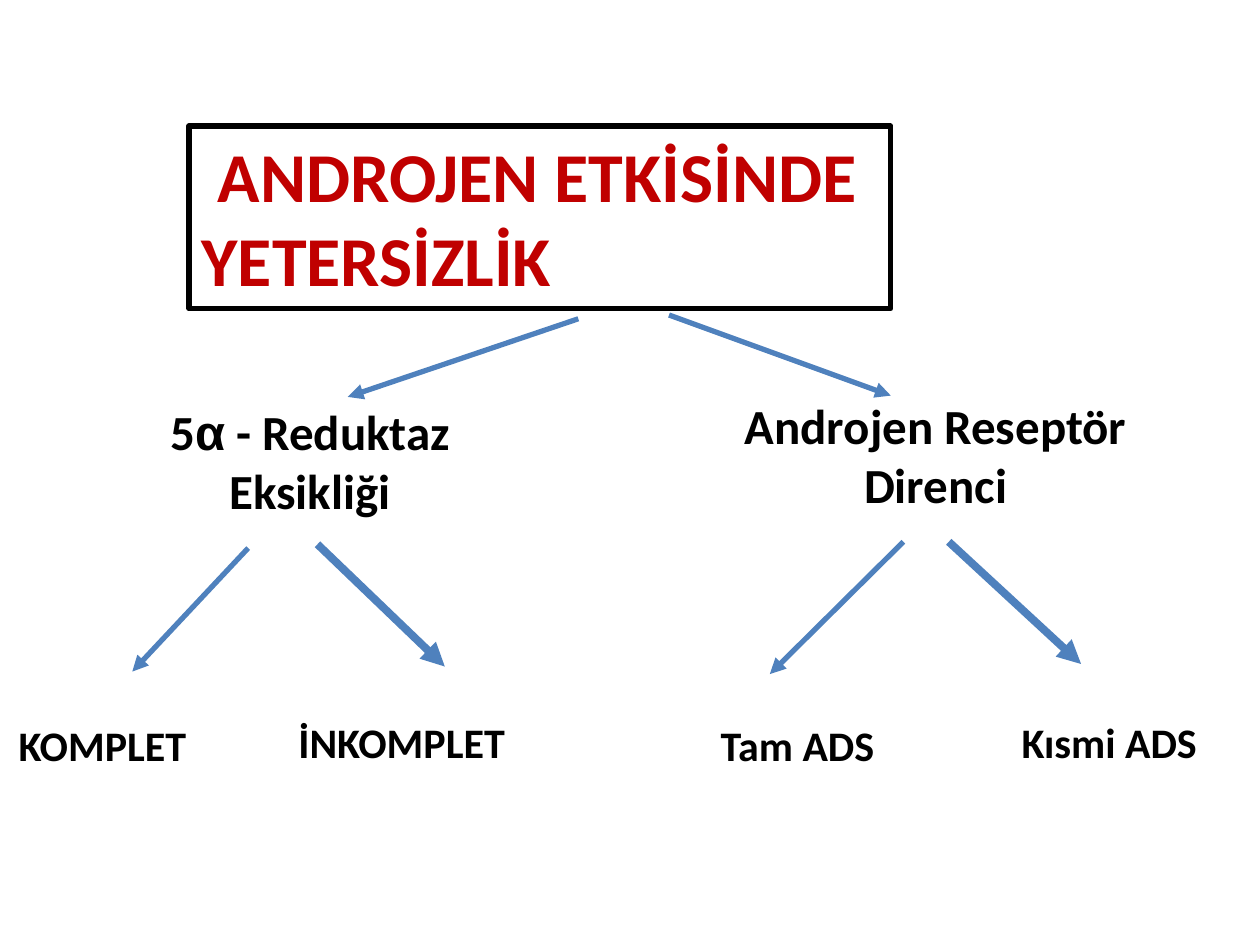
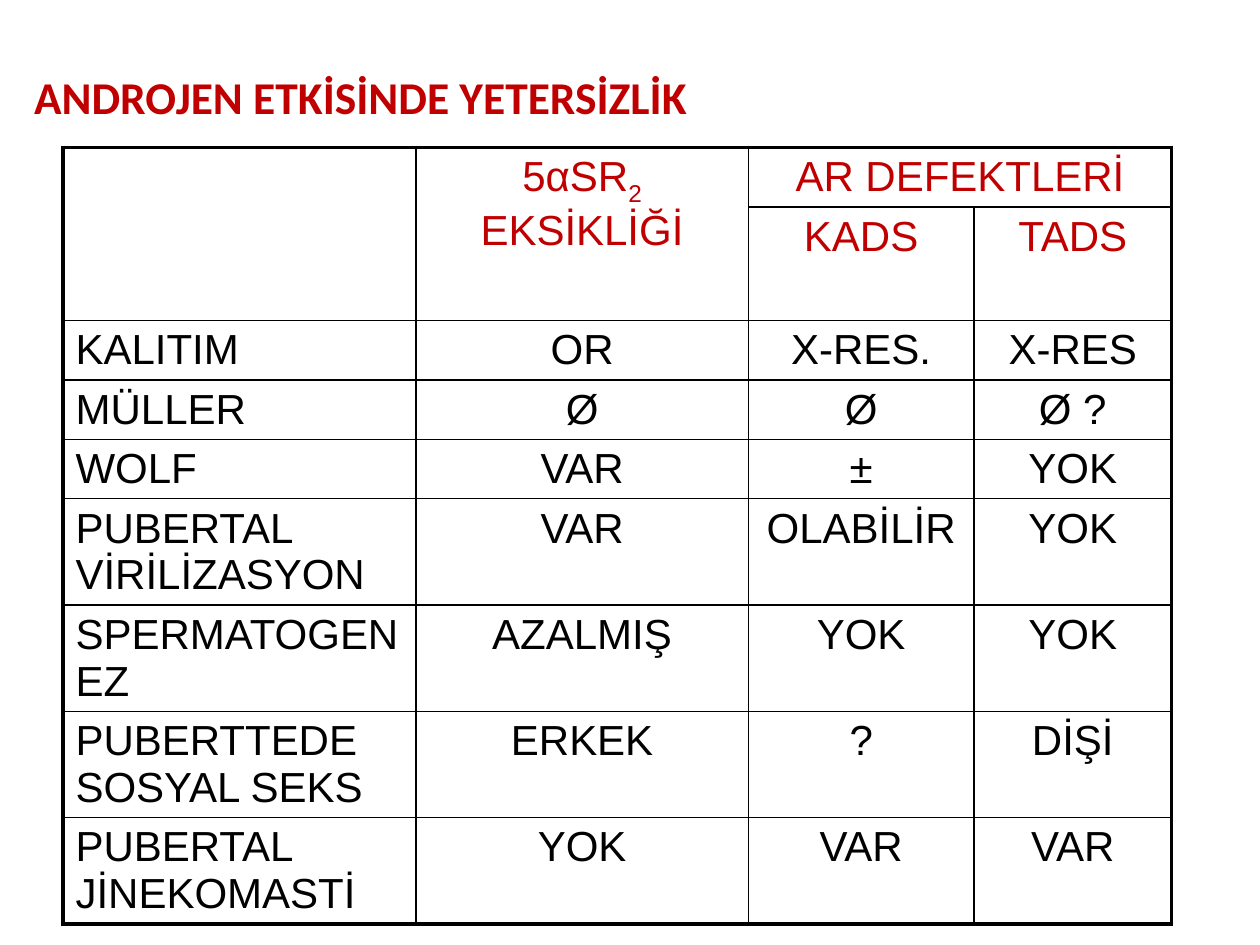
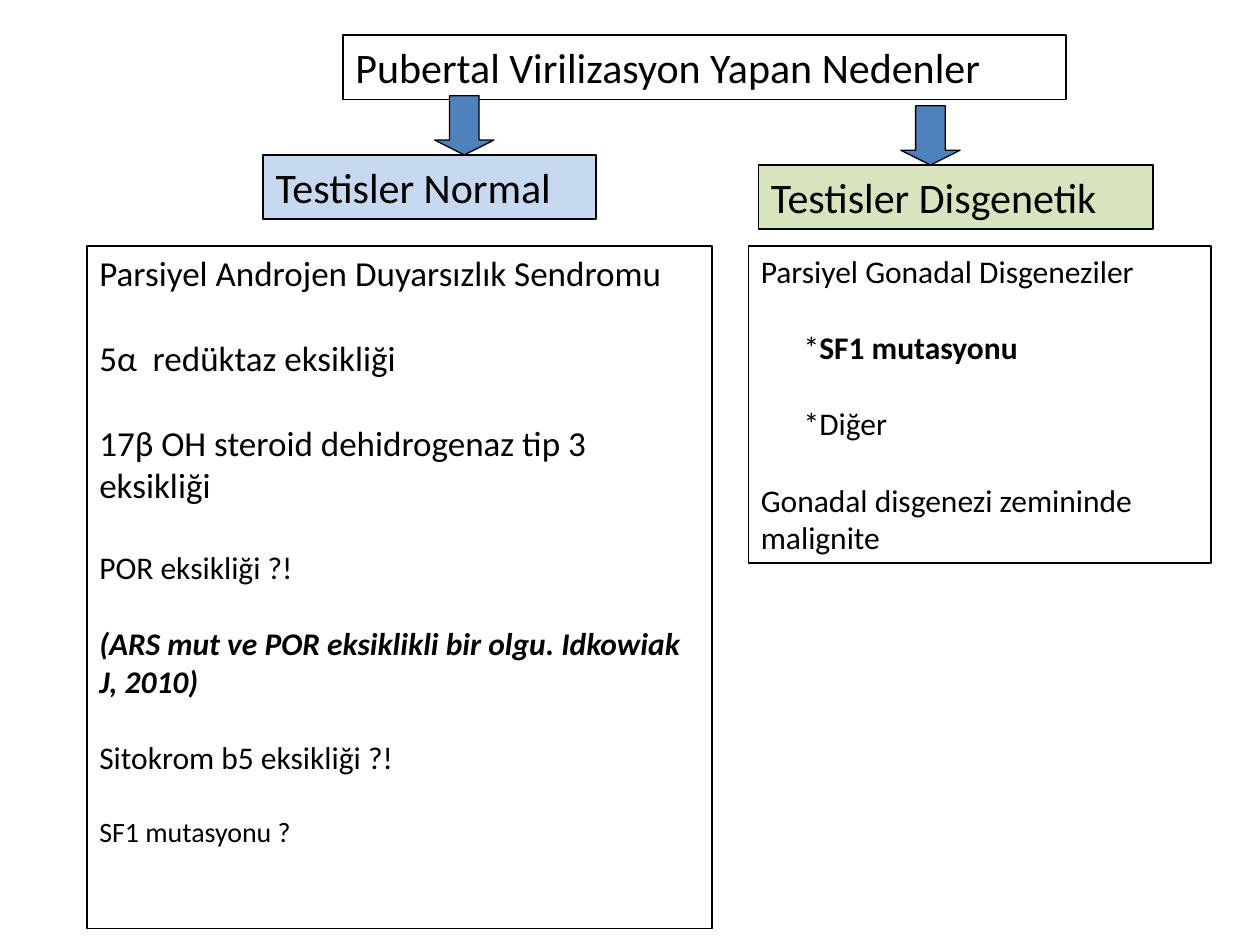
from lxml import etree
from pptx import Presentation
from pptx import util as u
from pptx.dml.color import RGBColor
from pptx.enum import shapes, text
from pptx.oxml.ns import qn

BLACK, RED, BLUE = "000000", "C00000", "4F81BD"
SKY, GREEN = "C6D9F1", "D7E4BD"
LEFT, MID = text.PP_ALIGN.LEFT, text.PP_ALIGN.CENTER
LEAD = 1.22
BODY = {"name": "Calibri", "size": 24, "bold": False, "color": BLACK}
BOLD = {**BODY, "bold": True}
HEAD = {**BOLD, "color": RED}
GRID = {**BODY, "name": "Arial"}


def rgb(code):
    return RGBColor.from_string(code)


def style(run, form):
    for key, val in form.items():
        if key == "color":
            run.font.color.rgb = rgb(val)
        elif key == "base":
            run._r.get_or_add_rPr().set("baseline", str(val * 1000))
        else:
            setattr(run.font, key, u.Pt(val) if key == "size" else val)


def para(*runs, gap=0, left=0, first=0, **form):
    return {"runs": runs, "gap": gap, "left": left, "first": first, "form": form}


def write(frame, paras, form, align=LEFT):
    for num, item in enumerate(paras):
        item = para(item) if isinstance(item, str) else item
        par = frame.paragraphs[0] if num == 0 else frame.add_paragraph()
        par.alignment = align
        par.space_before = u.Pt(item["gap"] * LEAD)
        prop = par._p.get_or_add_pPr()
        prop.set("marL", str(u.Inches(item["left"])))
        prop.set("indent", str(u.Inches(item["first"])))
        for part in item["runs"]:
            word, more = (part, {}) if isinstance(part, str) else part
            run = par.add_run()
            run.text = word
            style(run, {**form, **item["form"], **more})


def place(shape, at):
    for key, val in zip(("left", "top", "width", "height"), at):
        setattr(shape, key, u.Inches(val))


def setup(frame):
    form = {"word_wrap": True, "auto_size": text.MSO_AUTO_SIZE.NONE,
            "vertical_anchor": text.MSO_ANCHOR.TOP}
    for key, val in form.items():
        setattr(frame, key, val)


def paint(shape, fill, width):
    if fill:
        shape.fill.solid()
        shape.fill.fore_color.rgb = rgb(fill)
    else:
        shape.fill.background()
    shape.line.color.rgb = rgb(BLACK)
    shape.line.width = u.Pt(width)


def start(deck, at, paras, form, edge=None):
    slide = deck.slides.add_slide(deck.slide_layouts[5])
    title = slide.shapes.title
    place(title, at)
    setup(title.text_frame)
    write(title.text_frame, paras, form)
    if edge:
        paint(title, None, edge)
    return slide


def label(slide, at, paras, form, align=LEFT):
    box = slide.shapes.add_textbox(*map(u.Inches, at))
    setup(box.text_frame)
    write(box.text_frame, paras, form, align)


def panel(slide, at, paras, form, fill=None):
    box = slide.shapes.add_shape(shapes.MSO_SHAPE.RECTANGLE, *map(u.Inches, at))
    box.shadow.inherit = False
    paint(box, fill, 1)
    setup(box.text_frame)
    write(box.text_frame, paras, form)


def block(slide, left, top, size=0.47):
    at = map(u.Inches, (left, top, size, size))
    arrow = slide.shapes.add_shape(shapes.MSO_SHAPE.DOWN_ARROW, *at)
    arrow.adjustments[0], arrow.adjustments[1] = 0.5, 0.25
    arrow.shadow.inherit = False
    paint(arrow, BLUE, 0.75)


def arrow(slide, ends, width):
    link = slide.shapes.add_connector(
        shapes.MSO_CONNECTOR.STRAIGHT, *map(u.Inches, ends))
    link.line.color.rgb = rgb(BLUE)
    link.line.width = u.Pt(width)
    etree.SubElement(link.line._get_or_add_ln(), qn("a:tailEnd"), type="triangle")
    etree.SubElement(link._element.spPr, qn("a:effectLst"))


def border(cell, sides):
    prop = cell._tc.get_or_add_tcPr()
    for side, width in sides.items():
        line = etree.SubElement(prop, qn("a:ln" + side), w=str(u.Pt(width)))
        fill = etree.SubElement(line, qn("a:solidFill"))
        etree.SubElement(fill, qn("a:srgbClr"), val=BLACK)


def chart(slide, at, cols, rows, data):
    frame = slide.shapes.add_table(len(rows), len(cols), *map(u.Inches, at))
    table = frame.table
    for col, width in zip(table.columns, cols):
        col.width = u.Inches(width)
    for row, height in zip(table.rows, rows):
        row.height = u.Inches(height)
    for one, two in (((0, 0), (1, 0)), ((0, 1), (1, 1)), ((0, 2), (0, 3))):
        table.cell(*one).merge(table.cell(*two))
    for r, row in enumerate(data):
        for c, item in enumerate(row):
            cell = table.cell(r, c)
            right = c + cell.span_width == len(cols)
            rims = {"L": c == 0, "R": right, "T": r == 0, "B": r == len(rows) - 1}
            border(cell, {key: 2.25 if rim else 1 for key, rim in rims.items()})
            cell.fill.background()
            if item:
                paras = [item] if isinstance(item, str) else item
                form = {**GRID, "color": RED if r < 2 else BLACK}
                write(cell.text_frame, paras, form, MID if c else LEFT)


def tree(deck):
    slide = start(deck, (1.5, 1, 5.57, 1.45),
                  [para("ANDROJEN ETKİSİNDE", first=0.13), "YETERSİZLİK"],
                  {**HEAD, "size": 40}, 3)
    for left, top, width, word in (
            (0.05, 5.66, 1.83, "KOMPLET"), (2.27, 5.64, 2.16, "İNKOMPLET"),
            (5.62, 5.66, 1.68, "Tam ADS"), (8.01, 5.64, 1.91, "Kısmi ADS")):
        label(slide, (left, top, width, 0.5), [word], BOLD)
    alpha = para("5", ("α", {"name": "Arial"}), " - Reduktaz")
    for at, paras in (
            ((1.09, 3.14, 2.74, 1.03), [alpha, "Eksikliği"]),
            ((5.57, 3.09, 3.71, 1.03), ["Androjen Reseptör", "Direnci"])):
        label(slide, at, paras, {**BOLD, "size": 28}, MID)
    for *ends, width in (
            (4.59, 2.53, 2.76, 3.15, 3), (5.31, 2.5, 7.07, 3.14, 3),
            (1.97, 4.35, 1.05, 5.33, 3), (2.52, 4.32, 3.53, 5.29, 4.5),
            (7.17, 4.3, 6.11, 5.35, 3), (7.53, 4.3, 8.58, 5.27, 4.5)):
        arrow(slide, ends, width)


def matrix(deck):
    slide = start(deck, (0.17, 0.5, 9.29, 0.53),
                  ["ANDROJEN ETKİSİNDE YETERSİZLİK"], {**HEAD, "size": 26})
    lack = [para("5αSR", ("2", {"base": -25})), "EKSİKLİĞİ"]
    data = [
        (None, lack, "AR DEFEKTLERİ", None),
        (None, None, "KADS", "TADS"),
        ("KALITIM", "OR", "X-RES.", "X-RES"),
        ("MÜLLER", "Ø", "Ø", "Ø ?"),
        ("WOLF", "VAR", "±", "YOK"),
        ("PUBERTAL VİRİLİZASYON", "VAR", "OLABİLİR", "YOK"),
        ("SPERMATOGENEZ", "AZALMIŞ", "YOK", "YOK"),
        ("PUBERTTEDE SOSYAL SEKS", "ERKEK", "?", "DİŞİ"),
        ("PUBERTAL JİNEKOMASTİ", "YOK", "VAR", "VAR"),
    ]
    rows = [0.47, 0.9] + [0.47] * 3 + [0.84] * 4
    chart(slide, (0.5, 1.17, 8.8, sum(rows)), (2.8, 2.64, 1.79, 1.57), rows, data)


def causes(deck):
    slide = start(deck, (2.72, 0.28, 5.74, 0.51),
                  ["Pubertal Virilizasyon Yapan Nedenler"], BODY, 1)
    panel(slide, (2.09, 1.23, 2.64, 0.51), ["Testisler Normal"], BODY, SKY)
    panel(slide, (6.02, 1.31, 3.13, 0.51), ["Testisler Disgenetik"], BODY, GREEN)
    panel(slide, (0.69, 1.95, 4.96, 5.42), [
        "Parsiyel Androjen Duyarsızlık Sendromu",
        para("5α  redüktaz eksikliği", gap=20),
        para("17β OH steroid dehidrogenaz tip 3 eksikliği", gap=20),
        para("POR eksikliği ?!", gap=20, size=18),
        para("(ARS mut ve POR eksiklikli bir olgu. Idkowiak J, 2010)",
             gap=18, size=18, bold=True, italic=True),
        para("Sitokrom b5 eksikliği ?!", gap=18, size=18),
        para("SF1 mutasyonu ?", gap=18, size=16),
    ], {**BODY, "size": 20})
    panel(slide, (5.94, 1.95, 3.67, 2.52), [
        "Parsiyel Gonadal Disgeneziler",
        para("*", ("SF1 mutasyonu", {"bold": True}), gap=18, left=0.34),
        para("*Diğer", gap=18, left=0.34),
        para("Gonadal disgenezi zemininde malignite", gap=18),
    ], {**BODY, "size": 18})
    block(slide, 3.45, 0.76)
    block(slide, 7.15, 0.84)


def main():
    deck = Presentation()
    deck.slide_width, deck.slide_height = u.Inches(10), u.Inches(7.5)
    tree(deck)
    matrix(deck)
    causes(deck)
    deck.save("out.pptx")


if __name__ == "__main__":
    main()
